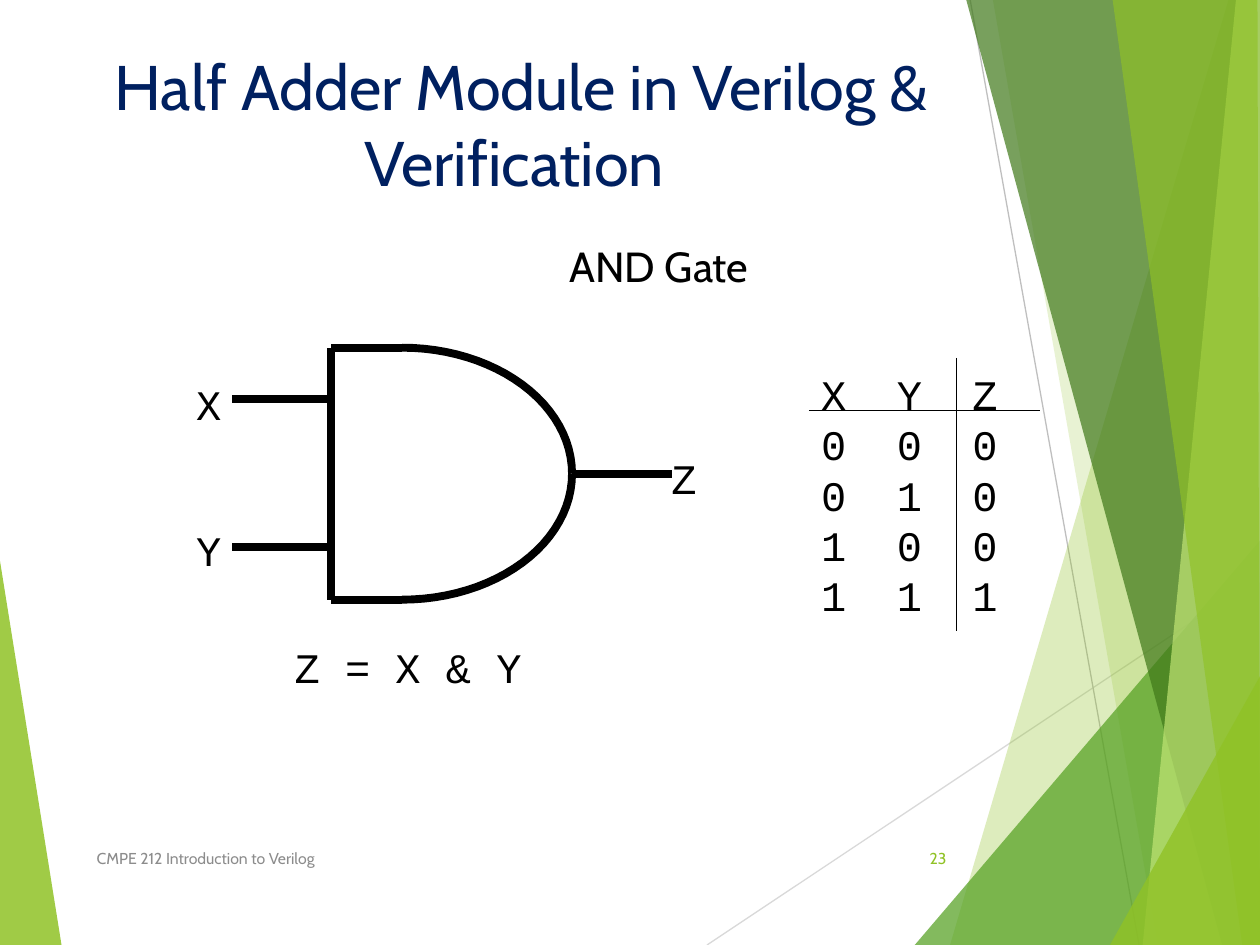
from math import cos, pi, sin

from lxml.etree import SubElement
from pptx import Presentation
from pptx.dml.color import RGBColor
from pptx.enum.text import MSO_ANCHOR, MSO_AUTO_SIZE, PP_ALIGN
from pptx.oxml.ns import qn
from pptx.util import Pt

LIME, BLACK = "90C226", "000000"
SANS, MONO = "Cabin", "Courier New"
RIGHT, BASE = 720.7, 540
MID, RADX, RADY = (229.7, 270.7), 97.2, 72  # centre and radii of the gate's curve
BACK = 189.4  # flat side of the gate
PITCH = 43.2  # three monospaced characters at 24 pt

FACETS = [
    (LIME, 85, [(-0.7, 316), (35.3, 540.7), (-0.7, BASE)]),
    (LIME, 30, [(702, 0), (542.9, BASE), (721.4, BASE), (RIGHT, 0)]),
    (LIME, 20, [(567.4, 0), (661.7, BASE), (RIGHT, BASE), (RIGHT, 0)]),
    ("54A021", 72, [(522.7, BASE), (720, 308.9), (RIGHT, BASE)]),
    ("3F7819", 70, [(552.2, 0), (698.4, BASE), (RIGHT, BASE), (RIGHT, 0)]),
    ("C0E474", 70, [(706.3, 0), (653, BASE), (RIGHT, BASE), (720, 0)]),
    (LIME, 65, [(635.8, 0), (709.9, BASE), (720, BASE), (718.6, 0)]),
    (LIME, 80, [(634.3, BASE), (RIGHT, 385.2), (RIGHT, BASE)]),
]


def paint(hue):
    return RGBColor.from_string(hue)


def outline(shapes, points, close):
    spots = [(Pt(x), Pt(y)) for x, y in points]
    pen = shapes.build_freeform(*spots[0], scale=1.0)
    pen.add_line_segments(spots[1:], close=close)
    shape = pen.convert_to_shape()
    shape.shadow.inherit = False
    return shape


def facet(shapes, hue, alpha, points):
    shape = outline(shapes, points, True)
    shape.fill.solid()
    shape.fill.fore_color.rgb = paint(hue)
    shape.line.fill.background()
    tone = shape.fill._xPr.find(qn("a:solidFill"))[0]
    SubElement(tone, qn("a:alpha"), val=str(alpha * 1000))


def curve(shapes, side):
    """Draw a quarter ellipse above (-1) or below (1) the centre."""
    turns = [pi / 2 * i / 24 for i in range(25)]
    points = [(MID[0] + RADX * sin(t), MID[1] + side * RADY * cos(t))
              for t in turns]
    shape = outline(shapes, points, False)
    shape.fill.background()
    shape.line.color.rgb = paint(BLACK)
    shape.line.width = Pt(4.5)


def wire(shapes, start, end, hue=BLACK, width=4.5):
    line = shapes.add_connector(1, *map(Pt, start + end))
    line.line.color.rgb = paint(hue)
    line.line.width = Pt(width)
    SubElement(line._element.spPr, qn("a:effectLst"))


def write(para, text, size, font, hue, align=PP_ALIGN.LEFT):
    para.alignment = align
    run = para.add_run()
    run.text = text
    run.font.size = Pt(size)
    run.font.name = font
    run.font.color.rgb = paint(hue)


def label(shapes, box, text, size, hue=BLACK, align=PP_ALIGN.LEFT,
          anchor=MSO_ANCHOR.TOP):
    frame = shapes.add_textbox(*map(Pt, box)).text_frame
    frame.word_wrap = True
    frame.vertical_anchor = anchor
    write(frame.paragraphs[0], text, size, SANS, hue, align)


def code(shapes, box, lines):
    """Write monospaced lines whose tabs stand one PITCH apart."""
    frame = shapes.add_textbox(*map(Pt, box)).text_frame
    frame.word_wrap = False
    frame.margin_top = Pt(6)
    for i, text in enumerate(lines):
        para = frame.add_paragraph() if i else frame.paragraphs[0]
        para.line_spacing = Pt(28.8)
        write(para, text, 24, MONO, BLACK)
        if "\t" in text:
            tabs = SubElement(para._p.get_or_add_pPr(), qn("a:tabLst"))
            for stop in (1, 2):
                SubElement(tabs, qn("a:tab"), pos=str(Pt(PITCH * stop)),
                           algn="l")


def backdrop(shapes):
    facet(shapes, *FACETS[0])
    wire(shapes, (404, BASE), (RIGHT, 329), "D9D9D9", 0.75)
    wire(shapes, (554.4, 0), (650.9, BASE), "BFBFBF", 0.75)
    for item in FACETS[1:]:
        facet(shapes, *item)


def heading(shape, text):
    shape.left, shape.top, shape.width, shape.height = map(
        Pt, (48.2, 23.8, 499.7, 103.7))
    frame = shape.text_frame
    frame.word_wrap = True
    frame.auto_size = MSO_AUTO_SIZE.NONE
    frame.vertical_anchor = MSO_ANCHOR.TOP
    write(frame.paragraphs[0], text, 36, SANS, "002060", PP_ALIGN.CENTER)


def gate(shapes):
    x, y = MID
    for side in (-1, 1):
        curve(shapes, side)
        wire(shapes, (x, y + side * RADY), (BACK, y + side * RADY))
    wire(shapes, (BACK, y - RADY), (BACK, y + RADY))
    for level in (228.2, 312.5):
        wire(shapes, (BACK, level), (132.5, level))
    wire(shapes, (383.8, y), (x + RADX, y))
    for name, left, top in (("X", 105, 210.2), ("Y", 105, 293.8),
                            ("Z", 376.6, 252.7)):
        code(shapes, (left, top, 28.8, 36), [name])
    code(shapes, (161.3, 360.7, 144, 36), ["Z = X & Y"])


def truth(shapes):
    rows = ["XYZ", "000", "010", "100", "111"]
    code(shapes, (462.2, 204.5, 115.2, 151.2), ["\t".join(r) for r in rows])
    wire(shapes, (462.2, 234.7), (594, 234.7), width=0.75)
    wire(shapes, (546.5, 204.5), (546.5, 360.7), width=0.75)


def main():
    deck = Presentation()
    deck.slide_width, deck.slide_height = Pt(720), Pt(540)
    slide = deck.slides.add_slide(deck.slide_layouts[5])
    shapes = slide.shapes
    backdrop(shapes)
    heading(shapes.title, "Half Adder Module in Verilog & Verification ")
    label(shapes, (48.2, 475.9, 364.3, 28.8),
          "CMPE 212 Introduction to Verilog", 9, "8C8C8C",
          anchor=MSO_ANCHOR.MIDDLE)
    label(shapes, (507.6, 475.9, 40.3, 28.8), "23", 9, LIME,
          PP_ALIGN.RIGHT, MSO_ANCHOR.MIDDLE)
    label(shapes, (70.6, 133.9, 612, 184.3), "AND Gate", 24,
          align=PP_ALIGN.CENTER)
    gate(shapes)
    truth(shapes)
    deck.save("out.pptx")


if __name__ == "__main__":
    main()
